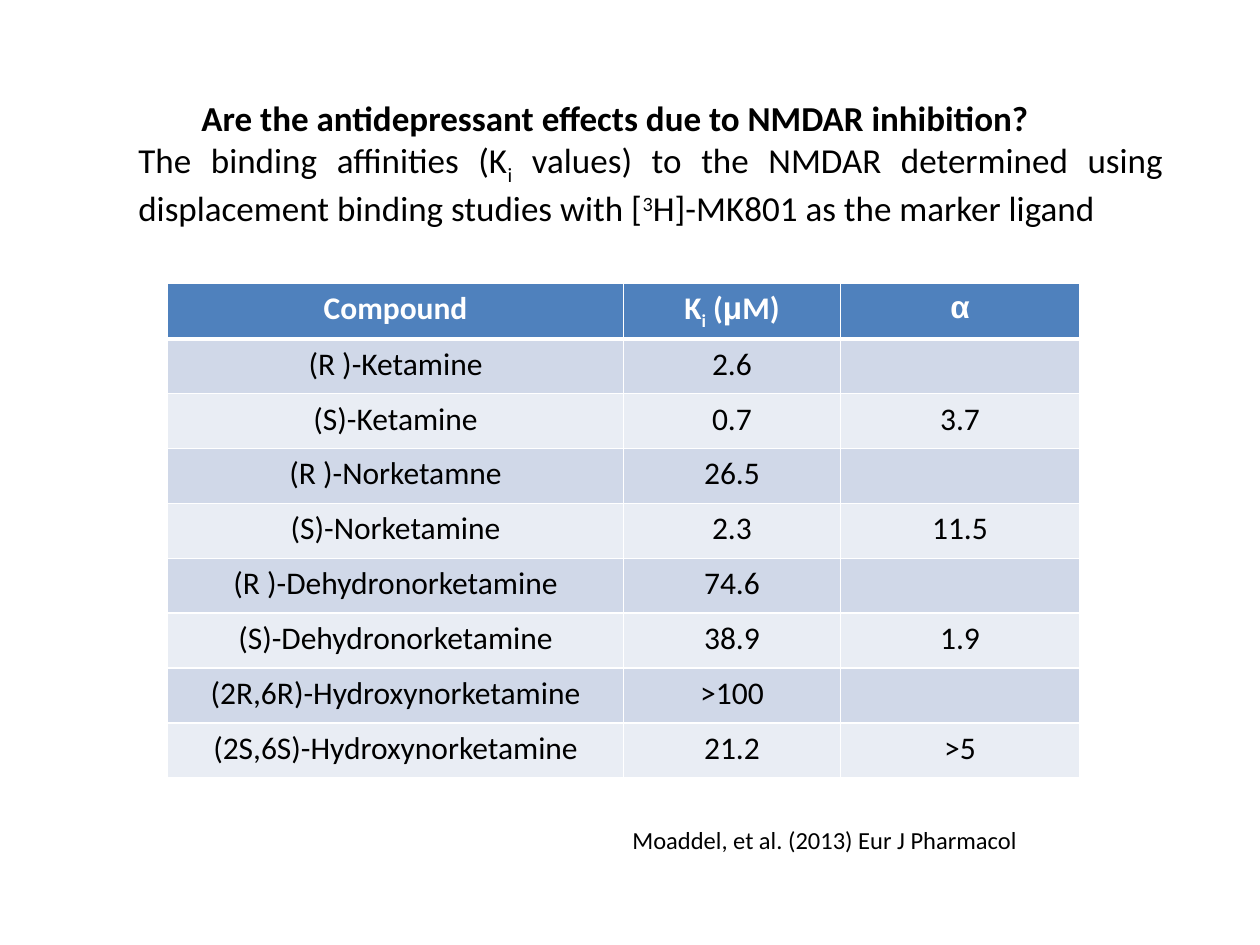
from typing import NamedTuple

import pptx
import pptx.dml.color
import pptx.enum.text
import pptx.oxml
import pptx.oxml.ns
import pptx.util

Inches = pptx.util.Inches
Align = pptx.enum.text.PP_ALIGN
AutoSize = pptx.enum.text.MSO_AUTO_SIZE

COLORS = {
    "text": "000000",
    "white": "FFFFFF",
    "header": "4F81BD",
    "odd": "D0D8E8",
    "even": "E9EDF4",
}
SUBSCRIPT, SUPERSCRIPT = -25, 30


class Piece(NamedTuple):
    """A stretch of text with its own font or baseline."""
    text: str
    font: str = "Calibri"
    baseline: int = 0


class Binding(NamedTuple):
    compound: str
    affinity: str
    ratio: str = ""


HEADER = (
    [Piece("Compound")],
    [Piece("K"), Piece("i", baseline=SUBSCRIPT), Piece(" ("),
     Piece("μ", font="Arial"), Piece("M)")],
    [Piece("α", font="Arial")],
)
BINDINGS = [
    Binding("(R )-Ketamine", "2.6"),
    Binding("(S)-Ketamine", "0.7", "3.7"),
    Binding("(R )-Norketamne", "26.5"),
    Binding("(S)-Norketamine", "2.3", "11.5"),
    Binding("(R )-Dehydronorketamine", "74.6"),
    Binding("(S)-Dehydronorketamine", "38.9", "1.9"),
    Binding("(2R,6R)-Hydroxynorketamine", ">100"),
    Binding("(2S,6S)-Hydroxynorketamine", "21.2", ">5"),
]
COLUMN_WIDTHS = (3.62, 1.72, 1.9)
TABLE_HEIGHT = 3.92


def rgb(name: str) -> pptx.dml.color.RGBColor:
    return pptx.dml.color.RGBColor.from_string(COLORS[name])


def write(para, pieces: list[Piece], *, size: float, color: str = "text",
          bold: bool = False, align=Align.LEFT) -> None:
    """Fill a paragraph with formatted pieces of text."""
    para.alignment = align
    for piece in pieces:
        span = para.add_run()
        span.text = piece.text
        span.font.name = piece.font
        span.font.size = pptx.util.Pt(size)
        span.font.bold = bold
        span.font.color.rgb = rgb(color)
        if piece.baseline:
            span.font._element.set("baseline", str(piece.baseline * 1000))


def add_box(page, left: float, top: float, width: float, height: float,
            wrap: bool = True):
    """Add a text box that grows with its text and return its frame."""
    box = page.shapes.add_textbox(Inches(left), Inches(top), Inches(width), Inches(height))
    frame = box.text_frame
    frame.word_wrap = wrap
    frame.auto_size = AutoSize.SHAPE_TO_FIT_TEXT
    return frame


def style_cell(cell, fill: str, top: float = 1, bottom: float = 1) -> None:
    """Give a cell its white borders (widths in points), then its fill."""
    properties = cell._tc.get_or_add_tcPr()
    for side, width in (("L", 1), ("R", 1), ("T", top), ("B", bottom)):
        properties.append(pptx.oxml.parse_xml(
            f'<a:ln{side} {pptx.oxml.ns.nsdecls("a")} w="{pptx.util.Pt(width)}">'
            f'<a:solidFill><a:srgbClr val="{COLORS["white"]}"/></a:solidFill>'
            f'</a:ln{side}>'))
    cell.fill.solid()
    cell.fill.fore_color.rgb = rgb(fill)


def add_binding_table(page) -> None:
    row_count = len(BINDINGS) + 1
    table = page.shapes.add_table(
        row_count, len(COLUMN_WIDTHS), Inches(1.33), Inches(2.25),
        Inches(sum(COLUMN_WIDTHS)), Inches(TABLE_HEIGHT)).table
    for column, width in zip(table.columns, COLUMN_WIDTHS):
        column.width = Inches(width)
    for row in table.rows:
        row.height = Inches(TABLE_HEIGHT / row_count)

    # Header row, closed by a thick line
    for cell, pieces in zip(table.rows[0].cells, HEADER):
        style_cell(cell, "header", bottom=3)
        write(cell.text_frame.paragraphs[0], pieces, size=18, color="white",
              bold=True, align=Align.CENTER)

    # Banded body rows
    for number, binding in enumerate(BINDINGS, start=1):
        for cell, text in zip(table.rows[number].cells, binding):
            style_cell(cell, "odd" if number % 2 else "even", top=3 if number == 1 else 1)
            if text:
                write(cell.text_frame.paragraphs[0], [Piece(text)], size=18,
                      align=Align.CENTER)


def main() -> None:
    deck = pptx.Presentation()
    deck.slide_width, deck.slide_height = Inches(10), Inches(7.5)
    page = deck.slides.add_slide(deck.slide_layouts[6])

    add_binding_table(page)

    # Question and explanation
    heading = add_box(page, 1, 0.72, 8.33, 1.11)
    write(heading.paragraphs[0],
          [Piece("\tAre the antidepressant effects due to NMDAR inhibition?")],
          size=20, bold=True, align=Align.JUSTIFY)
    write(heading.add_paragraph(), [
        Piece("The binding affinities (K"),
        Piece("i", baseline=SUBSCRIPT),
        Piece(" values) to the NMDAR determined using displacement binding studies with ["),
        Piece("3", baseline=SUPERSCRIPT),
        Piece("H]-MK801 as the marker ligand"),
    ], size=20, align=Align.JUSTIFY)

    # Citation
    citation = add_box(page, 4.92, 6.5, 3.28, 0.34, wrap=False)
    write(citation.paragraphs[0], [Piece("Moaddel, et al. (2013) Eur J Pharmacol")], size=14)

    deck.save("out.pptx")


if __name__ == "__main__":
    main()
